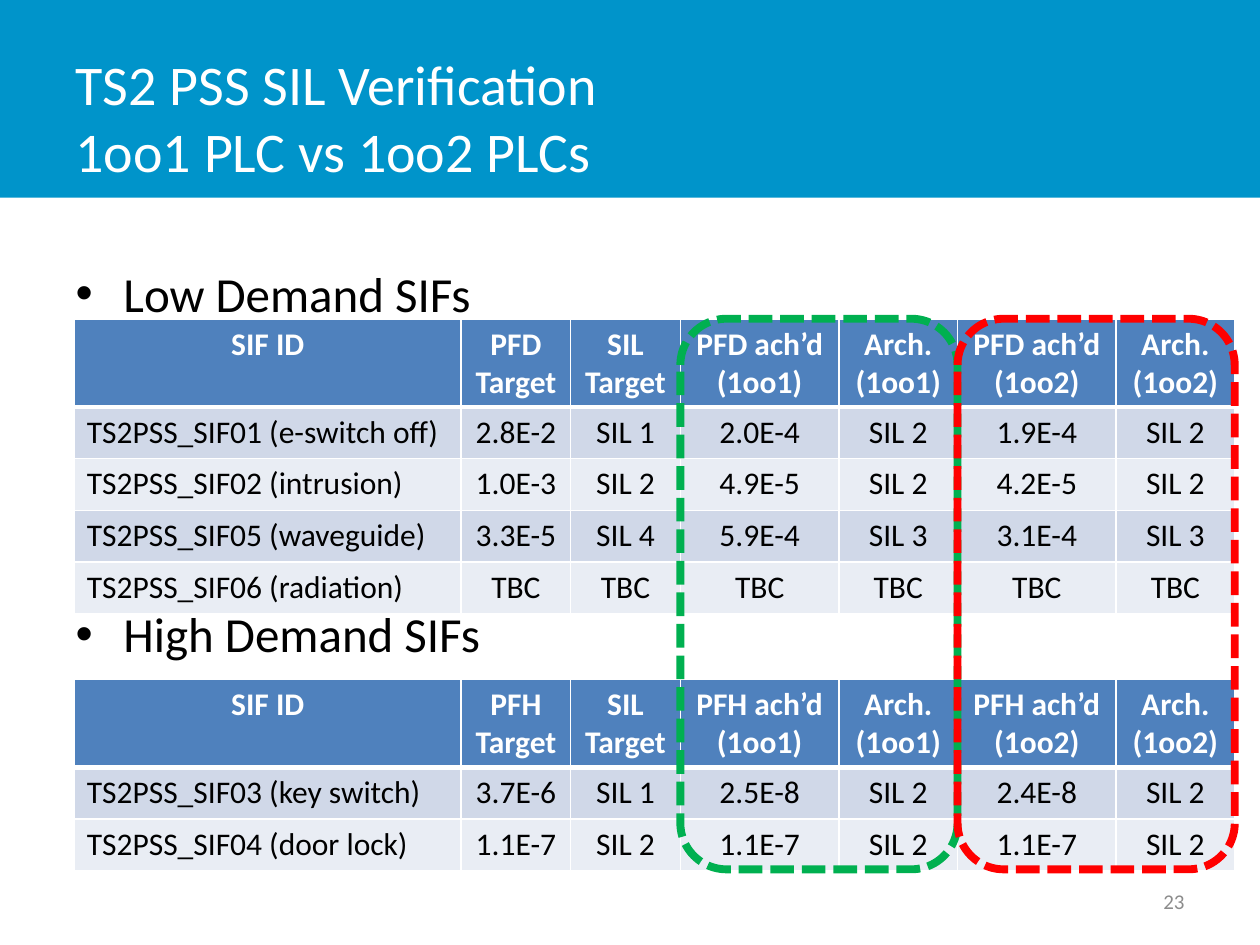
from lxml import etree
from pptx import Presentation
from pptx.dml.color import RGBColor
from pptx.enum.dml import MSO_LINE
from pptx.enum.shapes import MSO_SHAPE
from pptx.enum.text import MSO_ANCHOR, MSO_AUTO_SIZE, PP_ALIGN
from pptx.oxml.ns import qn
from pptx.util import Inches, Pt

RECT, ROUND_RECT = MSO_SHAPE.RECTANGLE, MSO_SHAPE.ROUNDED_RECTANGLE
DASHED = MSO_LINE.SQUARE_DOT
MIDDLE, NO_FIT = MSO_ANCHOR.MIDDLE, MSO_AUTO_SIZE.NONE
LEFT, CENTER, RIGHT = PP_ALIGN.LEFT, PP_ALIGN.CENTER, PP_ALIGN.RIGHT

FONT = "Calibri"
BLUE, WHITE, BLACK, GREY = "0094CA", "FFFFFF", "000000", "8C8C8C"
HEADER, BANDS = "4F81BD", ("D0D8E8", "E9EDF4")
GREEN, RED = "00B050", "FF0000"

COL_WIDTHS = (3.07, 0.87, 0.87, 1.26, 0.94, 1.26, 0.94)
ROW_HEIGHT = 0.41
TABLE_LEFT, LOW_TOP, HIGH_TOP, TABLES_BOTTOM = 0.59, 2.53, 5.39, 6.9

LOW_DEMAND = (
    ("TS2PSS_SIF01 (e-switch off)", "2.8E-2", "SIL 1", "2.0E-4", "SIL 2", "1.9E-4", "SIL 2"),
    ("TS2PSS_SIF02 (intrusion)", "1.0E-3", "SIL 2", "4.9E-5", "SIL 2", "4.2E-5", "SIL 2"),
    ("TS2PSS_SIF05 (waveguide)", "3.3E-5", "SIL 4", "5.9E-4", "SIL 3", "3.1E-4", "SIL 3"),
    ("TS2PSS_SIF06 (radiation)",) + ("TBC",) * 6,
)
HIGH_DEMAND = (
    ("TS2PSS_SIF03 (key switch)", "3.7E-6", "SIL 1", "2.5E-8", "SIL 2", "2.4E-8", "SIL 2"),
    ("TS2PSS_SIF04 (door lock)", "1.1E-7", "SIL 2", "1.1E-7", "SIL 2", "1.1E-7", "SIL 2"),
)


def rgb(value):
    return RGBColor.from_string(value)


def inches(box):
    return [Inches(v) for v in box]


def place(sp, box):
    sp.left, sp.top, sp.width, sp.height = inches(box)


def add_run(p, text, size, color, bold=False):
    r = p.add_run()
    r.text = text
    r.font.name, r.font.size, r.font.bold = FONT, Pt(size), bold
    r.font.color.rgb = rgb(color)


def add_title(s, band_box, box, lines):
    band = s.shapes.add_shape(RECT, *inches(band_box))
    band.shadow.inherit = False
    band.fill.solid()
    band.fill.fore_color.rgb = rgb(BLUE)
    band.line.fill.background()
    s.shapes.title.element.addprevious(band.element)  # behind the title

    place(s.shapes.title, box)
    tf = s.shapes.title.text_frame
    tf.vertical_anchor, tf.auto_size = MIDDLE, NO_FIT
    p = tf.paragraphs[0]
    p.alignment = LEFT
    for i, line in enumerate(lines):
        if i:
            p.add_line_break()
        add_run(p, line, 32, WHITE)


def add_bullets(s, box, items):
    """Fill the body; items are (text, space before in points)."""
    body = s.placeholders[1]
    place(body, box)
    tf = body.text_frame
    tf.auto_size = NO_FIT
    for i, (text, space) in enumerate(items):
        p = tf.add_paragraph() if i else tf.paragraphs[0]
        pPr = p._p.get_or_add_pPr()
        pPr.set("marL", str(Inches(0.38)))
        pPr.set("indent", str(-Inches(0.38)))
        etree.SubElement(pPr, qn("a:buFont"), typeface="Arial")
        etree.SubElement(pPr, qn("a:buChar"), char="•")
        p.space_before = Pt(space)
        add_run(p, text, 28, BLACK)


def set_borders(cell, top, bottom):
    tcPr = cell._tc.get_or_add_tcPr()
    for tag, width in (("lnL", 1), ("lnR", 1), ("lnT", top), ("lnB", bottom)):
        ln = etree.SubElement(tcPr, qn(f"a:{tag}"), w=str(Pt(width)))
        fill = etree.SubElement(ln, qn("a:solidFill"))
        etree.SubElement(fill, qn("a:srgbClr"), val=WHITE)


def add_sif_table(s, left, top, measure, data):
    header = ["SIF ID", f"{measure} Target", "SIL Target"]
    for arch in ("(1oo1)", "(1oo2)"):
        header += [f"{measure} ach’d {arch}", f"Arch. {arch}"]
    rows = [header, *data]
    box = (left, top, sum(COL_WIDTHS), ROW_HEIGHT * len(rows))
    table = s.shapes.add_table(len(rows), len(header), *inches(box)).table
    for col, width in zip(table.columns, COL_WIDTHS):
        col.width = Inches(width)
    for i, row in enumerate(rows):
        table.rows[i].height = Inches(ROW_HEIGHT)
        is_header = i == 0
        for j, text in enumerate(row):
            cell = table.cell(i, j)
            set_borders(cell, 3 if i == 1 else 1, 3 if is_header else 1)
            cell.fill.solid()
            cell.fill.fore_color.rgb = rgb(HEADER if is_header else BANDS[(i - 1) % 2])
            p = cell.text_frame.paragraphs[0]
            p.alignment = CENTER if is_header or j else LEFT
            add_run(p, text, 18, WHITE if is_header else BLACK, is_header)


def add_highlight(s, box, color):
    sp = s.shapes.add_shape(ROUND_RECT, *inches(box))
    sp.shadow.inherit = False
    sp.fill.background()
    sp.line.color.rgb = rgb(color)
    sp.line.width = Pt(4.5)
    sp.line.dash_style = DASHED


def add_page_number(s, box, number):
    tf = s.shapes.add_textbox(*inches(box)).text_frame
    tf.word_wrap = True
    tf.vertical_anchor = MIDDLE
    p = tf.paragraphs[0]
    p.alignment = RIGHT
    add_run(p, number, 12, GREY)


def main():
    prs = Presentation()
    prs.slide_width, prs.slide_height = Inches(10), Inches(7.5)
    s = prs.slides.add_slide(prs.slide_layouts[1])
    add_title(s, (0, 0, 10, 1.57), (0.5, 0.3, 7.81, 1.25),
              ("TS2 PSS SIL Verification", "1oo1 PLC vs 1oo2 PLCs"))
    add_page_number(s, (7.17, 6.95, 2.33, 0.4), "23")
    add_bullets(s, (0.5, 2.04, 9, 4.95),
                (("Low Demand SIFs", 0), ("High Demand SIFs", 161)))
    add_sif_table(s, TABLE_LEFT, LOW_TOP, "PFD", LOW_DEMAND)
    add_sif_table(s, TABLE_LEFT, HIGH_TOP, "PFH", HIGH_DEMAND)

    width = sum(COL_WIDTHS[3:5])
    left = TABLE_LEFT + sum(COL_WIDTHS[:3])
    for i, color in enumerate((GREEN, RED)):
        add_highlight(s, (left + i * width, LOW_TOP, width, TABLES_BOTTOM - LOW_TOP), color)
    prs.save("out.pptx")


if __name__ == "__main__":
    main()
